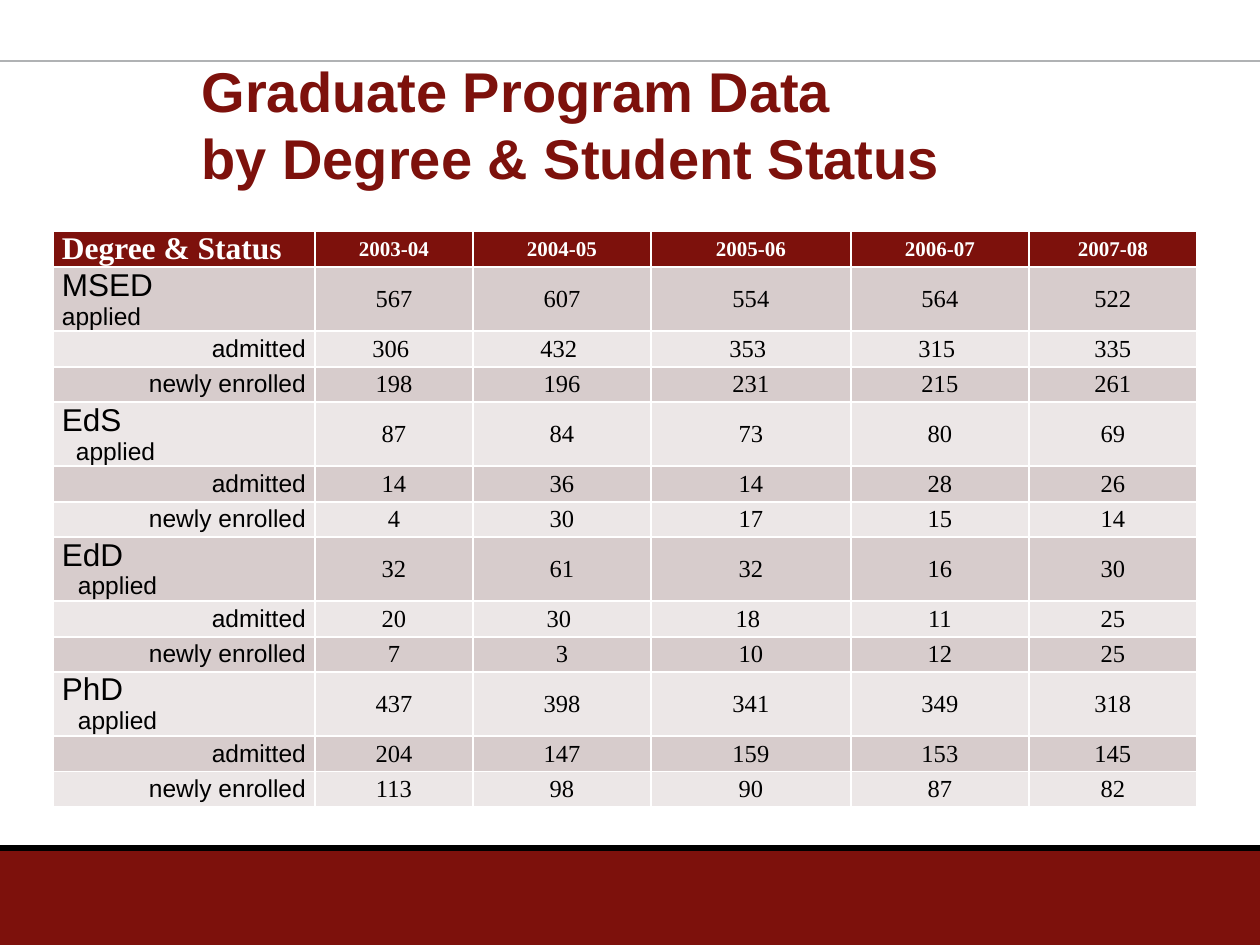
from lxml.etree import SubElement
from pptx import Presentation
from pptx.dml.color import RGBColor
from pptx.enum.shapes import MSO_CONNECTOR, MSO_SHAPE
from pptx.enum.text import MSO_ANCHOR, PP_ALIGN
from pptx.oxml.ns import qn
from pptx.util import Pt

SCALE = 914400 / 126
WIDE, HIGH = 1260, 945
RED, BLACK, WHITE, GRAY = "7D110C", "000000", "FFFFFF", "B0B2B4"
BANDS = ["D7CCCC", "ECE7E7"]
SANS, SERIF = "Arial", "Times New Roman"

YEARS = ["2003-04", "2004-05", "2005-06", "2006-07", "2007-08"]
STAGES = ["applied", "admitted", "newly enrolled"]
# Degree, hanging indent in px, counts for each stage
DEGREES = [
    ("MSED", 0, [["567", "607", "554", "564", "522"],
                 ["306 ", "432 ", "353 ", "315 ", "335"],
                 ["198", "196", "231", "215", "261"]]),
    ("EdS", 14, [["87", "84", "73", "80", "69"],
                 ["14", "36", "14", "28", "26"],
                 ["4", "30", "17", "15", "14"]]),
    ("EdD", 16, [["32", "61", "32", "16", "30"],
                 ["20", "30 ", "18 ", "11", "25"],
                 ["7", "3", "10", "12", "25"]]),
    ("PhD", 16, [["437", "398", "341", "349", "318"],
                 ["204", "147", "159", "153", "145"],
                 ["113", "98", "90", "87", "82"]]),
]
COLS = [262, 158, 178, 200, 178, 168]
HEAD, GROUP = 36, [64, 36, 35]


def px(n):
    return round(n * SCALE)


def color(code):
    return RGBColor.from_string(code)


def style(run, size, face, code, bold=False):
    font = run.font
    font.size, font.name, font.bold = Pt(size), face, bold
    font.color.rgb = color(code)


def add_rule(slide, y, code, weight):
    line = slide.shapes.add_connector(
        MSO_CONNECTOR.STRAIGHT, 0, px(y), px(WIDE), px(y))
    line.line.color.rgb = color(code)
    line.line.width = Pt(weight)
    SubElement(line._element.spPr, qn("a:effectLst"))


def add_frame(slide, top, foot):
    """Footer band and the rules at the top and bottom."""
    band = slide.shapes.add_shape(
        MSO_SHAPE.RECTANGLE, 0, px(foot), px(WIDE), px(HIGH - foot))
    band.shadow.inherit = False
    band.fill.solid()
    band.fill.fore_color.rgb = color(RED)
    band.line.fill.background()
    add_rule(slide, top, GRAY, 0.75)
    add_rule(slide, foot - 3, BLACK, 3.75)


def add_title(slide, x, y, w, h):
    title = slide.shapes.title
    title.left, title.top, title.width, title.height = map(px, (x, y, w, h))
    frame = title.text_frame
    frame.text = "Graduate Program Data\vby Degree & Student Status"
    frame.vertical_anchor = MSO_ANCHOR.MIDDLE
    para = frame.paragraphs[0]
    para.alignment = PP_ALIGN.LEFT
    for run in para.runs:
        style(run, 32, SANS, RED, True)


def fill_cell(cell, text, fill, align, sizes, face, code=BLACK, bold=False):
    cell.fill.solid()
    cell.fill.fore_color.rgb = color(fill)
    cell.vertical_anchor = MSO_ANCHOR.MIDDLE
    cell.margin_left = cell.margin_right = px(9)
    cell.margin_top = cell.margin_bottom = 0
    para = cell.text_frame.paragraphs[0]
    para.text = text
    para.alignment = align
    for run, size in zip(para.runs, sizes):
        style(run, size, face, code, bold)
    return para


def add_data(slide, x, y):
    heights = [HEAD] + GROUP * len(DEGREES)
    table = slide.shapes.add_table(
        len(heights), len(COLS), px(x), px(y),
        px(sum(COLS)), px(sum(heights))).table
    for col, w in zip(table.columns, COLS):
        col.width = px(w)
    for row, h in zip(table.rows, heights):
        row.height = px(h)

    # Header row
    fill_cell(table.cell(0, 0), "Degree & Status", RED, PP_ALIGN.LEFT,
              [18], SERIF, WHITE, True)
    for c, year in enumerate(YEARS, 1):
        fill_cell(table.cell(0, c), year, RED, PP_ALIGN.CENTER,
                  [12], SERIF, WHITE, True)

    # Three rows for each degree
    r = 0
    for degree, indent, counts in DEGREES:
        for stage, values in zip(STAGES, counts):
            fill = BANDS[r % 2]
            r += 1
            label = table.cell(r, 0)
            if stage == STAGES[0]:
                para = fill_cell(label, f"{degree}\v{stage}", fill,
                                 PP_ALIGN.LEFT, [18, 14], SANS)
                props = para._p.get_or_add_pPr()
                props.set("marL", str(px(indent)))
                props.set("indent", str(-px(indent)))
            else:
                fill_cell(label, stage, fill, PP_ALIGN.RIGHT, [14], SANS)
            for c, value in enumerate(values, 1):
                fill_cell(table.cell(r, c), value, fill, PP_ALIGN.CENTER,
                          [14], SERIF)


def main():
    deck = Presentation()
    deck.slide_width, deck.slide_height = px(WIDE), px(HIGH)
    slide = deck.slides.add_slide(deck.slide_layouts[5])
    add_frame(slide, 61, 851)
    add_title(slide, 189, 0, 980, 248)
    add_data(slide, 53, 231)
    deck.save("out.pptx")


if __name__ == "__main__":
    main()
